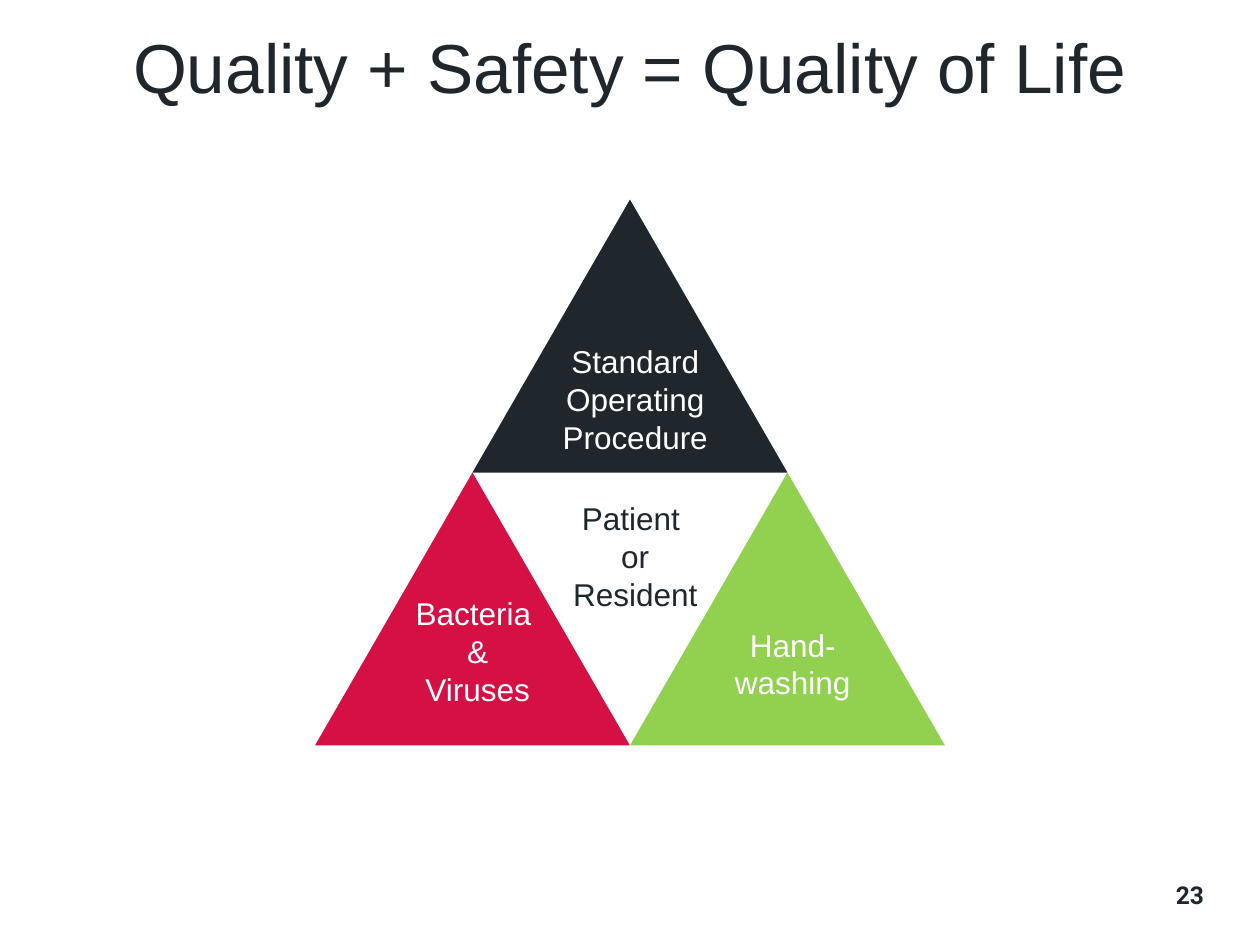
from dataclasses import dataclass

from pptx import Presentation
from pptx.dml.color import RGBColor
from pptx.enum.shapes import MSO_SHAPE
from pptx.enum.text import MSO_ANCHOR, PP_ALIGN
from pptx.slide import Slide
from pptx.util import Pt

TRIANGLE = MSO_SHAPE.ISOSCELES_TRIANGLE
CENTER = PP_ALIGN.CENTER
TOP, MIDDLE = MSO_ANCHOR.TOP, MSO_ANCHOR.MIDDLE

INK = RGBColor(0x1F, 0x27, 0x2C)
RED = RGBColor(0xD5, 0x10, 0x45)
GREEN = RGBColor(0x92, 0xD0, 0x50)
WHITE = RGBColor(0xFF, 0xFF, 0xFF)

# Pyramid geometry in points: each side is 180, the apex is centred
SIDE, ROW_HEIGHT = 180, 156
PYRAMID_LEFT, PYRAMID_TOP = 180, 114
LABEL_WIDTH = 138


@dataclass(frozen=True)
class Triangle:
    column: float
    row: int
    color: RGBColor


@dataclass(frozen=True)
class Label:
    left: float
    top: float
    width: float
    height: float
    lines: tuple[str, ...]
    color: RGBColor = INK
    size: float = 18
    font_name: str = "Arial"
    bold: bool = False
    anchor: MSO_ANCHOR = TOP
    line_spacing: float = 1.0


TRIANGLES = (
    Triangle(0.5, 0, INK),
    Triangle(0, 1, RED),
    Triangle(1, 1, GREEN),
)

LABELS = (
    # Title and page number
    Label(49.7, 3.6, 620.6, 73.4, ("Quality + Safety = Quality of Life",),
          size=39.6, anchor=MIDDLE, line_spacing=0.9),
    Label(640, 496.8, 80, 28.8, ("23",), size=14, font_name="Roboto",
          bold=True, anchor=MIDDLE),
    # Pyramid labels
    Label(294, 192, LABEL_WIDTH, 72, ("Standard", "Operating", "Procedure"), WHITE),
    Label(294, 281.7, LABEL_WIDTH, 72, ("Patient ", "or", "Resident")),
    Label(384, 354, LABEL_WIDTH, 50.4, ("Hand-", "washing"), WHITE),
    Label(204, 336, LABEL_WIDTH, 72, ("Bacteria ", "&", "Viruses"), WHITE),
)


def draw_triangle(slide: Slide, triangle: Triangle) -> None:
    shape = slide.shapes.add_shape(
        TRIANGLE,
        Pt(PYRAMID_LEFT + triangle.column * SIDE),
        Pt(PYRAMID_TOP + triangle.row * ROW_HEIGHT),
        Pt(SIDE), Pt(ROW_HEIGHT))
    shape.shadow.inherit = False
    shape.fill.solid()
    shape.fill.fore_color.rgb = triangle.color
    shape.line.fill.background()


def draw_label(slide: Slide, label: Label) -> None:
    shape = slide.shapes.add_textbox(
        Pt(label.left), Pt(label.top), Pt(label.width), Pt(label.height))
    frame = shape.text_frame
    frame.word_wrap = True
    frame.vertical_anchor = label.anchor
    paragraph = frame.paragraphs[0]
    paragraph.alignment = CENTER
    paragraph.line_spacing = label.line_spacing

    font_format = {"name": label.font_name, "size": Pt(label.size), "bold": label.bold}
    for index, line in enumerate(label.lines):
        if index:
            paragraph.add_line_break()
        run = paragraph.add_run()
        run.text = line
        for attribute, value in font_format.items():
            setattr(run.font, attribute, value)
        run.font.color.rgb = label.color


def main() -> None:
    presentation = Presentation()
    presentation.slide_width, presentation.slide_height = Pt(720), Pt(540)
    slide = presentation.slides.add_slide(presentation.slide_layouts[6])

    for triangle in TRIANGLES:
        draw_triangle(slide, triangle)
    for label in LABELS:
        draw_label(slide, label)

    presentation.save("out.pptx")


if __name__ == "__main__":
    main()
